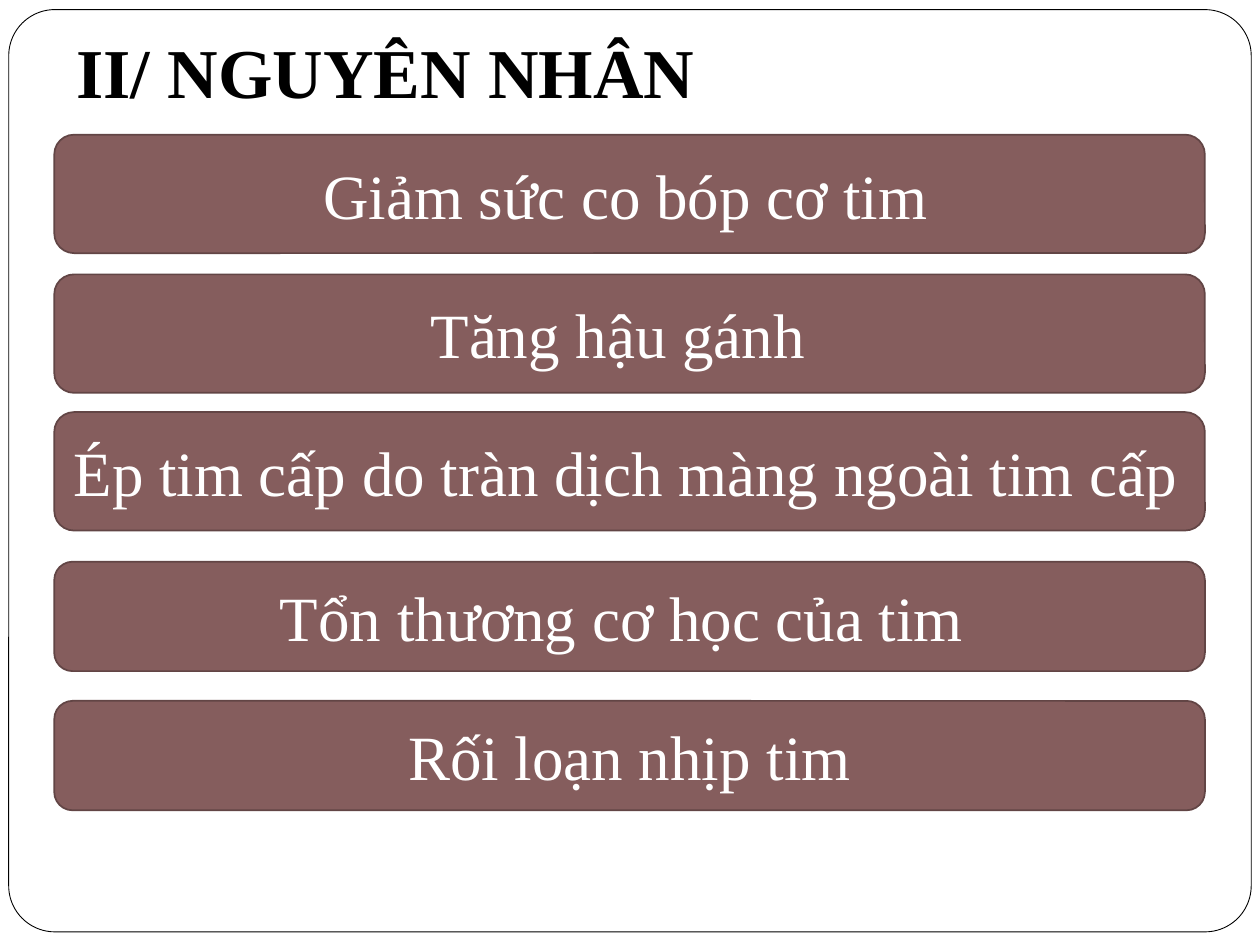
from pptx import Presentation
from pptx.dml.color import RGBColor
from pptx.enum.shapes import MSO_SHAPE
from pptx.enum.text import MSO_ANCHOR, PP_ALIGN
from pptx.util import Pt

ROUNDED = MSO_SHAPE.ROUNDED_RECTANGLE
MIDDLE, BOTTOM = MSO_ANCHOR.MIDDLE, MSO_ANCHOR.BOTTOM
LEFT, CENTER = PP_ALIGN.LEFT, PP_ALIGN.CENTER

# Content: cause, top, height, right inset that offsets the centred text
TITLE = "II/ NGUYÊN NHÂN"
CAUSES = [
    ("Giảm sức co bóp cơ tim", 77, 67.7, 4.5),
    ("Tăng hậu gánh", 156.8, 67.7, 13.5),
    ("Ép tim cấp do tràn dịch màng ngoài tim cấp", 235.5, 67.7, 4.5),
    ("Tổn thương cơ học của tim", 321, 62.5, 9),
    ("Rối loạn nhịp tim", 400.5, 62.5, 0),
]
BAR_LEFT, BAR_WIDTH = 31, 657.5


def color(value):
    return RGBColor.from_string(value)


def write_text(shape, text, *, size, ink, bold=False, align=LEFT,
               anchor=MIDDLE, insets=(0, 0, 0, 0)):
    frame = shape.text_frame
    frame.word_wrap = True
    frame.vertical_anchor = anchor
    (frame.margin_left, frame.margin_top,
     frame.margin_right, frame.margin_bottom) = map(Pt, insets)
    paragraph = frame.paragraphs[0]
    paragraph.text = text
    paragraph.alignment = align
    font = paragraph.font
    font.name, font.size, font.bold = "Times New Roman", Pt(size), bold
    font.color.rgb = color(ink)


def add_rounded(slide, left, top, width, height, fill, line, line_width):
    shape = slide.shapes.add_shape(
        ROUNDED, Pt(left), Pt(top), Pt(width), Pt(height))
    shape.shadow.inherit = False
    shape.fill.solid()
    shape.fill.fore_color.rgb = color(fill)
    shape.line.color.rgb = color(line)
    shape.line.width = Pt(line_width)
    return shape


presentation = Presentation()
presentation.slide_width, presentation.slide_height = Pt(720), Pt(540)
slide = presentation.slides.add_slide(presentation.slide_layouts[6])

# Slide frame
border = add_rounded(slide, 5, 5.5, 710, 527, "FFFFFF", "000000", 0.5)
border.adjustments[0] = 0.05

# Title
title = slide.shapes.add_textbox(Pt(36.7), Pt(0), Pt(648), Pt(71.3))
write_text(title, TITLE, size=40, ink="000000", bold=True,
           anchor=BOTTOM, insets=(7.2, 3.6, 7.2, 7.2))

# Cause bars
for cause, top, height, right_inset in CAUSES:
    bar = add_rounded(slide, BAR_LEFT, top, BAR_WIDTH, height,
                      "855D5D", "624545", 1)
    write_text(bar, cause, size=36, ink="FFFFFF", align=CENTER,
               insets=(0, 3.6, right_inset, 3.6))

presentation.save("out.pptx")
